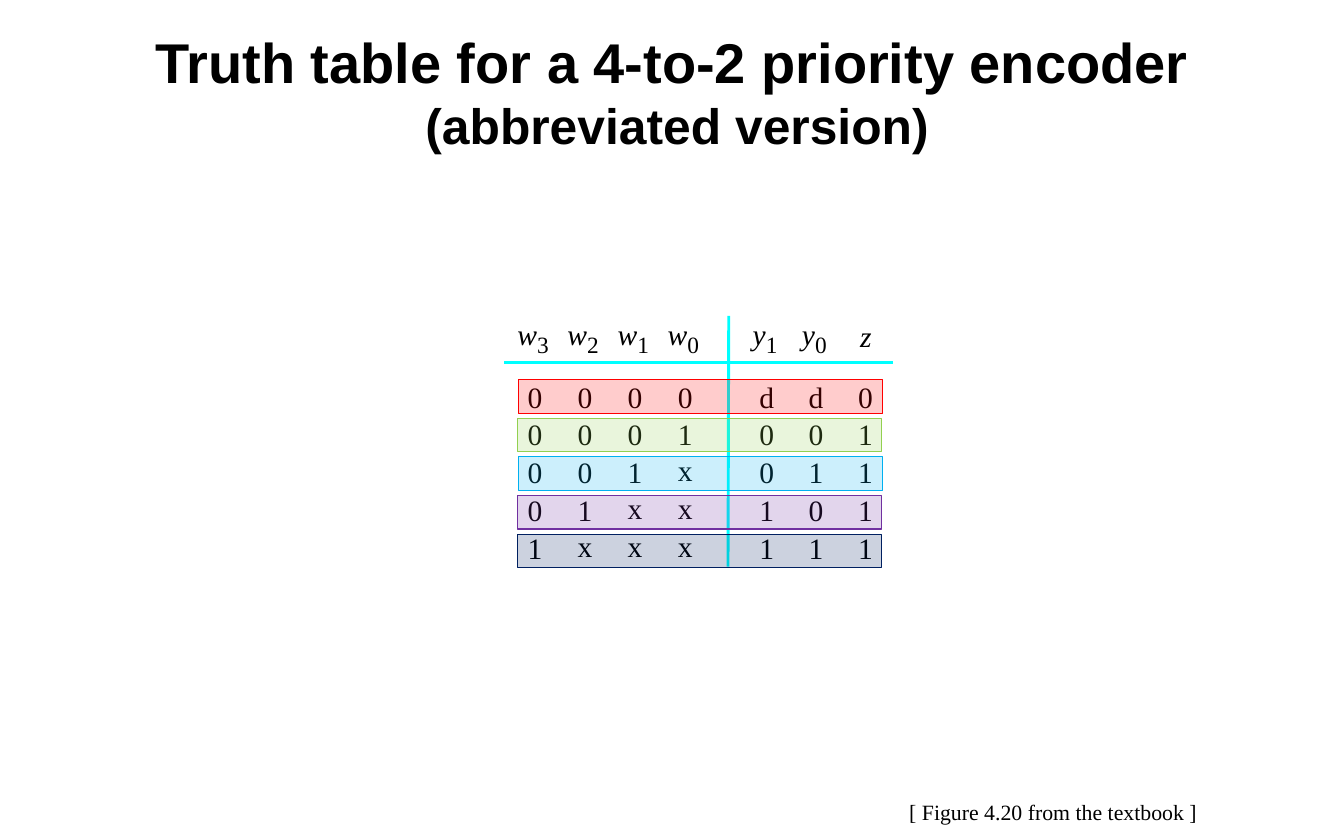
import dataclasses

import pptx
import pptx.dml.color
import pptx.enum.shapes
import pptx.enum.text
import pptx.util
from lxml import etree
from pptx.oxml.ns import qn

Pt = pptx.util.Pt
RGB = pptx.dml.color.RGBColor.from_string


@dataclasses.dataclass(frozen=True)
class Theme:
    sans: str = "Arial"
    serif: str = "Times New Roman"
    ink: str = "000000"
    rule: str = "00FFFF"
    bands: tuple = ("FF0000", "92D050", "00B0F0", "7030A0", "002060")
    title: int = 36
    subtitle: int = 32
    symbol: int = 19
    subscript: int = 15
    credit: int = 14


THEME = Theme()

# Truth table: inputs w3 to w0, then outputs y1, y0, z
ROWS = ["0000dd0", "0001001", "001x011", "01xx101", "1xxx111"]
COLUMNS = [339.1 + 32.2 * i for i in range(4)] + [488.2 + 31.7 * i for i in range(3)]
HEADERS = ["w3", "w2", "w1", "w0", "y1", "y0", "z"]
# Symbol offset from its column, and subscript offset from the symbol
HEADER_OFFSETS = {"w": (-6.5, 12.7), "y": (-4.4, 8.6), "z": (1.4, 0)}
HEADER_TOP, FIRST_ROW, ROW_STEP = 203, 243.4, 24.3


def style(para, font, size, bold=False, italic=False):
    para.font.name = font
    para.font.size = Pt(size)
    para.font.bold = bold
    para.font.italic = italic
    para.font.color.rgb = RGB(THEME.ink)


def add_text(shapes, text, left, top, width, height, font, size, inset=True, **looks):
    box = shapes.add_textbox(Pt(left), Pt(top), Pt(width), Pt(height))
    frame = box.text_frame
    frame.word_wrap = False
    frame.auto_size = pptx.enum.text.MSO_AUTO_SIZE.SHAPE_TO_FIT_TEXT
    if not inset:
        frame.margin_left = frame.margin_right = 0
        frame.margin_top = frame.margin_bottom = 0
    para = frame.paragraphs[0]
    para.text = text
    style(para, font, size, **looks)


def add_symbol(shapes, text, left, top, size=THEME.symbol, italic=False):
    width = size * (0.72 if text == "w" else 0.5)
    add_text(shapes, text, left, top, width, size * 1.2, THEME.serif, size,
             inset=False, italic=italic)


def add_rule(shapes, start, end):
    rule = shapes.add_connector(pptx.enum.shapes.MSO_CONNECTOR.STRAIGHT,
                                *(Pt(value) for value in start + end))
    rule.line.color.rgb = RGB(THEME.rule)
    rule.line.width = Pt(1.88)
    etree.SubElement(rule._element.spPr, qn("a:effectLst"))


def add_band(shapes, left, top, color):
    band = shapes.add_shape(pptx.enum.shapes.MSO_SHAPE.RECTANGLE,
                            Pt(left), Pt(top), Pt(234), Pt(21.6))
    band.shadow.inherit = False
    band.fill.solid()
    band.fill.fore_color.rgb = RGB(color)
    fill = band._element.spPr.find(qn("a:solidFill"))
    etree.SubElement(fill[0], qn("a:alpha"), val="20000")
    band.line.color.rgb = RGB(color)
    band.line.width = Pt(0.75)


def set_title(page, text):
    title = page.shapes.title
    title.left, title.top, title.width, title.height = Pt(72), Pt(12.2), Pt(856 - 136), Pt(54)
    frame = title.text_frame
    frame.auto_size = pptx.enum.text.MSO_AUTO_SIZE.NONE
    frame.vertical_anchor = pptx.enum.text.MSO_ANCHOR.MIDDLE
    para = frame.paragraphs[0]
    para.text = text
    para.alignment = pptx.enum.text.PP_ALIGN.CENTER
    style(para, THEME.sans, THEME.title, bold=True)


def add_truth_table(page):
    shapes = page.shapes.add_group_shape().shapes
    add_rule(shapes, (324, 233.2), (573.8, 233.2))
    add_rule(shapes, (468, 364.3), (468.5, 203))

    for name, column in zip(HEADERS, COLUMNS):
        letter, digit = name[0], name[1:]
        shift, gap = HEADER_OFFSETS[letter]
        top = HEADER_TOP if digit else HEADER_TOP + 1.4
        add_symbol(shapes, letter, column + shift, top, italic=True)
        if digit:
            add_symbol(shapes, digit, column + shift + gap, HEADER_TOP + 9.4,
                       THEME.subscript)

    for index, row in enumerate(ROWS):
        for value, column in zip(row, COLUMNS):
            lift = 1.1 if value == "x" else 0
            add_symbol(shapes, value, column, FIRST_ROW + index * ROW_STEP - lift)


def main():
    deck = pptx.Presentation()
    deck.slide_width, deck.slide_height = Pt(864), Pt(540)
    page = deck.slides.add_slide(deck.slide_layouts[5])

    # Heading
    set_title(page, "Truth table for a 4-to-2 priority encoder")
    add_text(page.shapes, "(abbreviated version)", 266.4, 57.6, 340.6, 46,
             THEME.sans, THEME.subtitle, bold=True)

    # Table with one tinted band over each row
    add_truth_table(page)
    for index, color in enumerate(THEME.bands):
        left = 333.4 if index in (0, 2) else 332.6
        add_band(page.shapes, left, 244 + 24.85 * index, color)

    # Credit
    add_text(page.shapes, "[ Figure 4.20 from the textbook ]", 577.4, 509.8, 200.9, 24.5,
             THEME.serif, THEME.credit)
    deck.save("out.pptx")


if __name__ == "__main__":
    main()
